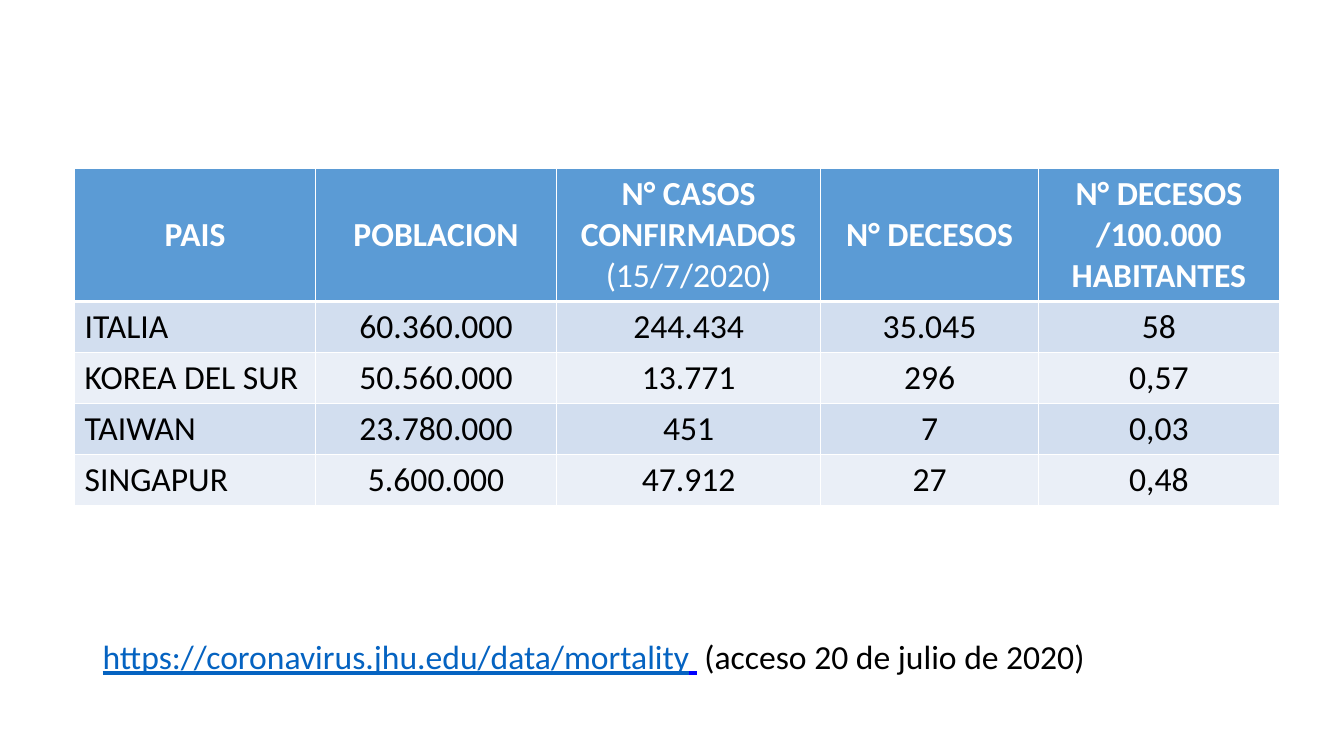
"""Build a slide with a table of cases and deaths by country."""
from lxml import etree
from pptx import Presentation
from pptx.dml.color import RGBColor
from pptx.enum.text import MSO_ANCHOR, PP_ALIGN
from pptx.oxml.ns import qn
from pptx.util import Inches, Pt

LEFT, CENTER = PP_ALIGN.LEFT, PP_ALIGN.CENTER
TOP, MIDDLE = MSO_ANCHOR.TOP, MSO_ANCHOR.MIDDLE
WHITE = RGBColor(0xFF, 0xFF, 0xFF)
BLACK = RGBColor(0, 0, 0)
HEAD = RGBColor(0x5B, 0x9B, 0xD5)
BANDS = [RGBColor(0xEA, 0xEF, 0xF7), RGBColor(0xD2, 0xDE, 0xEF)]
LINK = RGBColor(0x05, 0x63, 0xC1)
BLUE = RGBColor(0, 0, 0xFF)


def add_run(para, text, color, bold=False, under=False):
    run = para.add_run()
    run.text = text
    font = run.font
    font.name, font.size = "Calibri", Pt(24)
    font.bold, font.underline = bold, under
    font.color.rgb = color


def add_edge(cell, side, width):
    line = etree.SubElement(cell._tc.get_or_add_tcPr(), qn("a:ln" + side), w=str(Pt(width)))
    fill = etree.SubElement(line, qn("a:solidFill"))
    etree.SubElement(fill, qn("a:srgbClr"), val=str(WHITE))


deck = Presentation()
deck.slide_width, deck.slide_height = Inches(13.33), Inches(7.5)
slide = deck.slides.add_slide(deck.slide_layouts[6])

rows = [
    ["PAIS", "POBLACION", "N° CASOS CONFIRMADOS ", "N° DECESOS",
     "N° DECESOS /100.000 HABITANTES"],
    ["ITALIA", "60.360.000", "244.434", "35.045", "58"],
    ["KOREA DEL SUR", "50.560.000", "13.771", "296", "0,57"],
    ["TAIWAN", "23.780.000", "451", "7", "0,03"],
    ["SINGAPUR", "5.600.000", "47.912", "27", "0,48"],
]
widths = [2.39, 2.39, 2.62, 2.16, 2.39]
heights = [1.31] + [0.5] * 4

table = slide.shapes.add_table(
    len(rows), len(widths), Inches(0.74), Inches(1.67),
    Inches(sum(widths)), Inches(sum(heights))).table
for col, width in zip(table.columns, widths):
    col.width = Inches(width)
for row, height in zip(table.rows, heights):
    row.height = Inches(height)

for r, texts in enumerate(rows):
    head = r == 0
    for c, text in enumerate(texts):
        cell = table.cell(r, c)
        for side in "LRTB":
            thick = (r, side) in [(0, "B"), (1, "T")]
            add_edge(cell, side, 3 if thick else 1)
        cell.fill.solid()
        cell.fill.fore_color.rgb = HEAD if head else BANDS[r % 2]
        cell.vertical_anchor = MIDDLE if head else TOP
        para = cell.text_frame.paragraphs[0]
        para.alignment = CENTER if head or c else LEFT
        add_run(para, text, WHITE if head else BLACK, bold=head)
add_run(table.cell(0, 2).text_frame.paragraphs[0], "(15/7/2020)", WHITE)

box = slide.shapes.add_textbox(Inches(0.92), Inches(6.26), Inches(11.5), Inches(0.5))
box.text_frame.word_wrap = True
para = box.text_frame.paragraphs[0]
add_run(para, "https://coronavirus.jhu.edu/data/mortality", LINK, under=True)
add_run(para, " ", BLUE, under=True)
add_run(para, " (acceso 20 de julio de 2020)", BLACK)

deck.save("out.pptx")
